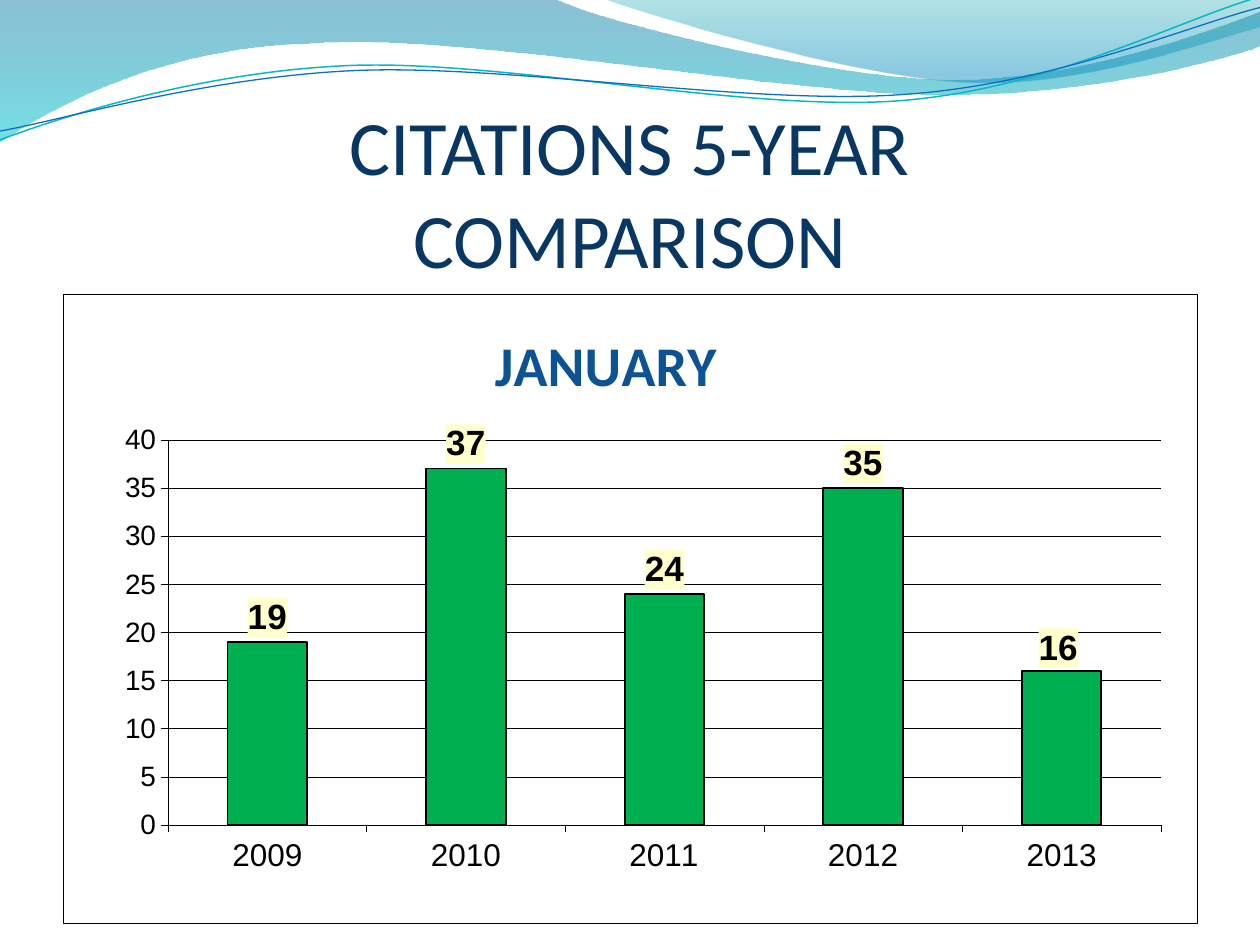
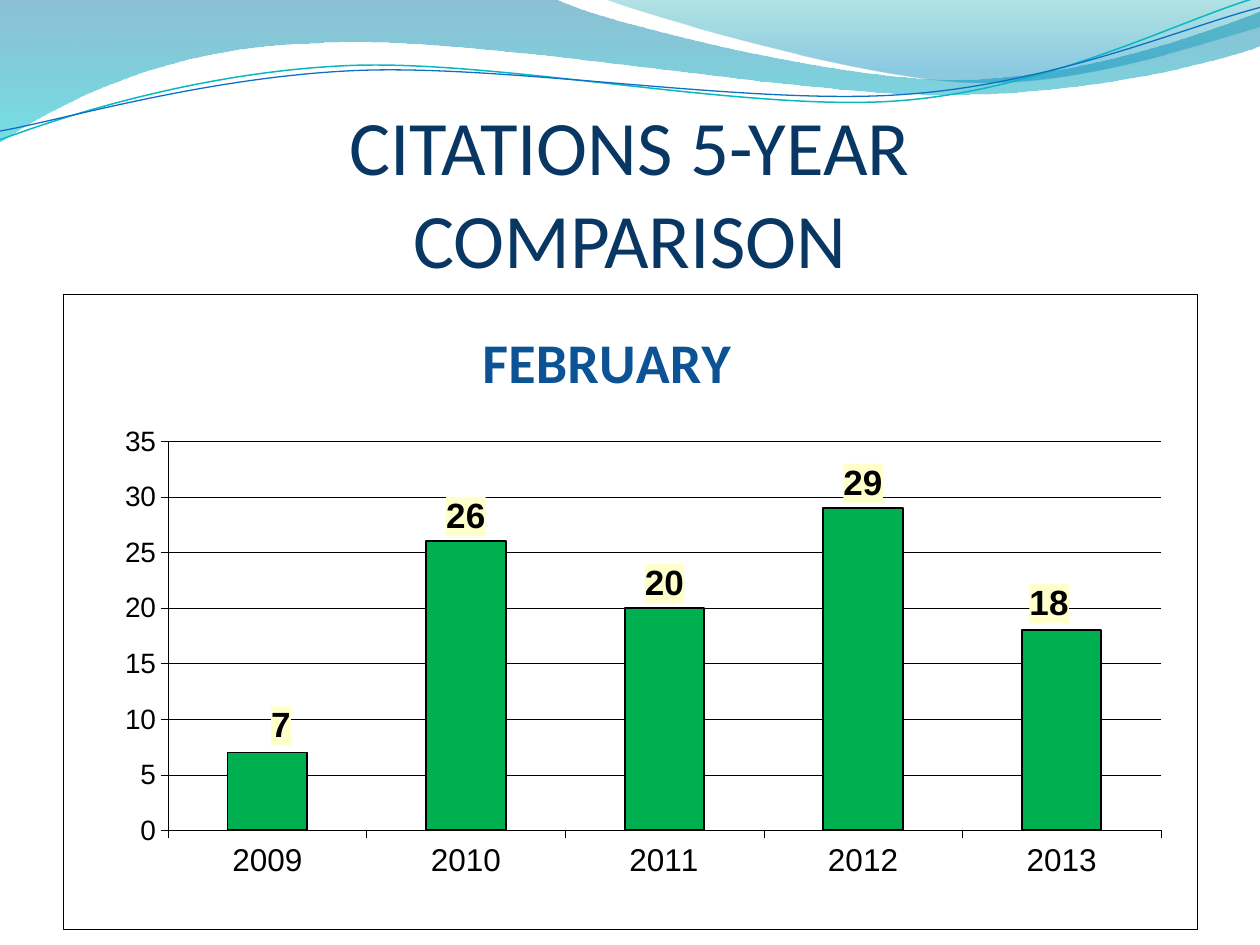
from math import cos, radians, sin

from lxml import etree
from pptx import Presentation
from pptx.chart.data import CategoryChartData
from pptx.dml.color import RGBColor
from pptx.enum.chart import XL_CHART_TYPE, XL_LABEL_POSITION, XL_TICK_MARK
from pptx.enum.text import MSO_ANCHOR, PP_ALIGN
from pptx.oxml import parse_xml
from pptx.oxml.ns import qn
from pptx.util import Inches, Pt

COLUMNS = XL_CHART_TYPE.COLUMN_CLUSTERED
ABOVE_BAR = XL_LABEL_POSITION.OUTSIDE_END
TICK_OUT = XL_TICK_MARK.OUTSIDE
BOTTOM = MSO_ANCHOR.BOTTOM
CENTER = PP_ALIGN.CENTER

SLIDE_W, SLIDE_H = Inches(10), Inches(7.5)
MARGIN = 0.05  # share of the slide width
NAVY, BLUE, GREEN = "083763", "0B5394", "00B050"
BLACK, WHITE, LABEL_YELLOW = "000000", "FFFFFF", "FFFFCC"
HEADING_FONT, CHART_FONT = "Calibri", "Arial"
HAIRLINE = 0.25
WAVE_TILT = -2.7  # degrees
NS = ('xmlns:a="http://schemas.openxmlformats.org/drawingml/2006/main" '
      'xmlns:c="http://schemas.openxmlformats.org/drawingml/2006/chart"')

# Header waves in inches: two numbers are a line end, six a Bezier curve.
# Gradient stops are (position, colour, opacity), all in percent.
WAVE_BANDS = [
    ([(0, 0), (4.4, -0.01), (4.76, 0.17, 6.64, 0.63, 7.58, 0.63),
      (8.53, 0.63, 9.58, 0.26, 10, 0.09), (10.01, 0.36),
      (9.83, 0.44, 8.7, 0.76, 7.46, 0.75), (6.22, 0.75, 3.82, 0.28, 2.57, 0.34),
      (1.29, 0.36, 0.46, 0.83, -0.01, 1.13), (0, 0)],
     [(0, "0074A1", 45), (100, "00C6CF", 55)]),
    ([(4.79, -0.01), (5.09, 0.11, 6.82, 0.62, 7.69, 0.65),
      (8.56, 0.69, 9.61, 0.32, 10, 0.21), (10, 0), (4.79, -0.01)],
     [(0, "00A1A9", 30), (80, "008BBF", 45)]),
]
# Path, centre, colour and width of each tilted line
WAVE_LINES = [
    ([(0, 1.11), (0.48, 0.93, 1.58, 0.57, 2.77, 0.52),
      (3.95, 0.47, 5.93, 0.89, 7.13, 0.8), (8.33, 0.71, 9.38, 0.15, 9.98, -0.02)],
     (4.99, 0.58), "0AB8BF", 0.85),
    ([(0, 1.04), (0.47, 0.96, 1.64, 0.61, 2.83, 0.56),
      (4.03, 0.51, 5.97, 0.84, 7.17, 0.75), (8.36, 0.67, 9.41, 0.21, 10, 0.06)],
     (5, 0.59), "0F6FC6", 0.75),
]

YEARS = ["2009", "2010", "2011", "2012", "2013"]
# Month, citations, axis top, chart height, month position, label shifts by year
MONTHS = [
    ("JANUARY", [19, 37, 24, 35, 16], 40, 5, (0.372, 0.035), {4: (-0.003, 0.003)}),
    ("FEBRUARY", [7, 26, 20, 29, 18], 35, 5.05, (0.361, 0.03),
     {0: (0.012, -0.003), 4: (-0.011, -0.003)}),
]


def rgb(hex_color):
    return RGBColor.from_string(hex_color)


def style_font(font, name, size, color, bold=False):
    font.name, font.size, font.bold = name, Pt(size), bold
    font.color.rgb = rgb(color)


def style_line(line, color, width):
    line.color.rgb = rgb(color)
    line.width = Pt(width)


# Header waves
def turn(step, center, degrees):
    """Turn every point of a path step around the centre."""
    c, s = cos(radians(degrees)), sin(radians(degrees))
    turned = []
    for x, y in zip(step[::2], step[1::2]):
        dx, dy = x - center[0], y - center[1]
        turned += [center[0] + c * dx - s * dy, center[1] + s * dx + c * dy]
    return turned


def add_outline(slide, path, closed):
    """Draw all points as straight segments, then join triples into curves."""
    points = [(Inches(x), Inches(y)) for step in path for x, y in zip(step[::2], step[1::2])]
    builder = slide.shapes.build_freeform(*points[0])
    builder.add_line_segments(points[1:], close=closed)
    outline = builder.convert_to_shape()
    outline.shadow.inherit = False
    segments = iter(list(outline.element.iter(qn("a:lnTo"))))
    for step in path[1:]:
        parts = [next(segments) for _ in range(len(step) // 2)]
        if len(parts) == 3:
            curve = etree.Element(qn("a:cubicBezTo"))
            parts[0].addprevious(curve)
            for part in parts:
                curve.append(part[0])
                part.getparent().remove(part)
    return outline


def add_wave_band(slide, path, stops):
    band = add_outline(slide, path, closed=True)
    band.line.fill.background()
    stop_xml = "".join(
        f'<a:gs pos="{pos * 1000}"><a:srgbClr val="{color}">'
        f'<a:alpha val="{opacity * 1000}"/></a:srgbClr></a:gs>'
        for pos, color, opacity in stops)
    gradient = parse_xml(f'<a:gradFill {NS} rotWithShape="1"><a:gsLst>{stop_xml}</a:gsLst>'
                         '<a:lin ang="5400000" scaled="0"/></a:gradFill>')
    band.element.spPr.find(qn("a:custGeom")).addnext(gradient)


def add_wave_line(slide, path, center, color, width):
    level_path = [turn(step, center, -WAVE_TILT) for step in path]
    wave = add_outline(slide, level_path, closed=False)
    wave.rotation = WAVE_TILT
    wave.fill.background()
    style_line(wave.line, color, width)


def add_header_waves(slide):
    for band in WAVE_BANDS:
        add_wave_band(slide, *band)
    for line in WAVE_LINES:
        add_wave_line(slide, *line)


# Slide title
def add_title(slide, lines):
    title = slide.shapes.add_textbox(int(SLIDE_W * MARGIN), Inches(1),
                                     int(SLIDE_W * (1 - 2 * MARGIN)), Inches(1.25))
    frame = title.text_frame
    frame.word_wrap = True
    frame.vertical_anchor = BOTTOM
    frame.margin_left = frame.margin_right = frame.margin_bottom = 0
    paragraph = frame.paragraphs[0]
    paragraph.alignment = CENTER
    for i, line in enumerate(lines):
        if i:
            paragraph.add_line_break()
        run = paragraph.add_run()
        run.text = line
        style_font(run.font, HEADING_FONT, 44, NAVY)


# Chart parts that need XML
def layout_xml(x, y, size=None, edge=True):
    """Manual layout in shares of the chart; edge=False makes x, y a shift."""
    layout = etree.Element(qn("c:layout"))
    manual = etree.SubElement(layout, qn("c:manualLayout"))
    settings = [("layoutTarget", "inner")] if size else []
    if edge:
        settings += [("xMode", "edge"), ("yMode", "edge")]
    settings += [("x", x), ("y", y)]
    if size:
        settings += zip("wh", size)
    for tag, value in settings:
        etree.SubElement(manual, qn(f"c:{tag}")).set("val", str(value))
    return layout


def drop_layout(parent):
    for layout in parent.findall(qn("c:layout")):
        parent.remove(layout)


def fill_behind_text(parent, color, border=""):
    box = parse_xml(f'<c:spPr {NS}><a:solidFill><a:srgbClr val="{color}"/></a:solidFill>'
                    f'{border}</c:spPr>')
    parent.find(qn("c:txPr")).addprevious(box)


def style_axis(axis, text_size):
    axis.major_tick_mark = TICK_OUT
    style_font(axis.tick_labels.font, CHART_FONT, text_size, BLACK)
    style_line(axis.format.line, BLACK, HAIRLINE)


def style_label(label):
    style_font(label.font, CHART_FONT, 20, BLACK, bold=True)
    label.position = ABOVE_BAR


def add_month_heading(chart, month, position):
    chart.has_title = True
    run = chart.chart_title.text_frame.paragraphs[0].add_run()
    run.text = month
    style_font(run.font, HEADING_FONT, 32, BLUE, bold=True)
    heading = chart._chartSpace.find(f".//{qn('c:title')}")
    drop_layout(heading)
    heading.find(qn("c:tx")).addnext(layout_xml(*position))


def add_bar_labels(bars, all_bars, label_shifts):
    bars.data_labels.show_value = True
    style_label(bars.data_labels)
    all_labels = all_bars.find(qn("c:dLbls"))
    fill_behind_text(all_labels, LABEL_YELLOW)
    for year, shift in label_shifts.items():
        style_label(bars.points[year].data_label)
        moved = all_labels.findall(qn("c:dLbl"))[-1]
        fill_behind_text(moved, LABEL_YELLOW)
        moved.find(qn("c:idx")).addnext(layout_xml(*shift, edge=False))


def add_citations_chart(slide, month, citations, axis_top, height, position, label_shifts):
    data = CategoryChartData()
    data.categories = YEARS
    data.add_series("Series 1", citations)
    chart = slide.shapes.add_chart(COLUMNS, int(SLIDE_W * MARGIN), Inches(2.33),
                                   int(SLIDE_W * (1 - 2 * MARGIN)), Inches(height), data).chart
    chart.has_legend = False
    style_font(chart.font, CHART_FONT, 9, BLACK)
    add_month_heading(chart, month, position)

    # Frame and plot area
    space = chart._chartSpace
    border = (f'<a:ln w="{Pt(HAIRLINE)}"><a:solidFill><a:srgbClr val="{BLACK}"/>'
              '</a:solidFill></a:ln>')
    fill_behind_text(space, WHITE, border)
    plot_area = space.find(f".//{qn('c:plotArea')}")
    drop_layout(plot_area)
    plot_area.insert(0, layout_xml(0.0925, 0.232, (0.876, 0.612)))

    # Axes
    style_axis(chart.category_axis, 18)
    counts = chart.value_axis
    style_axis(counts, 16)
    counts.minimum_scale, counts.maximum_scale, counts.major_unit = 0, axis_top, 5
    counts.has_major_gridlines = True
    style_line(counts.major_gridlines.format.line, BLACK, HAIRLINE)

    # Bars and their labels
    plot = chart.plots[0]
    plot.gap_width = 150
    plot.vary_by_categories = False
    bars = plot.series[0]
    bars.format.fill.solid()
    bars.format.fill.fore_color.rgb = rgb(GREEN)
    style_line(bars.format.line, BLACK, 1)
    add_bar_labels(bars, space.find(f".//{qn('c:ser')}"), label_shifts)


def main():
    deck = Presentation()
    deck.slide_width, deck.slide_height = SLIDE_W, SLIDE_H
    blank = deck.slide_layouts[6]
    for month in MONTHS:
        slide = deck.slides.add_slide(blank)
        add_header_waves(slide)
        add_title(slide, ["CITATIONS 5-YEAR", "COMPARISON"])
        add_citations_chart(slide, *month)
    deck.save("out.pptx")


if __name__ == "__main__":
    main()
